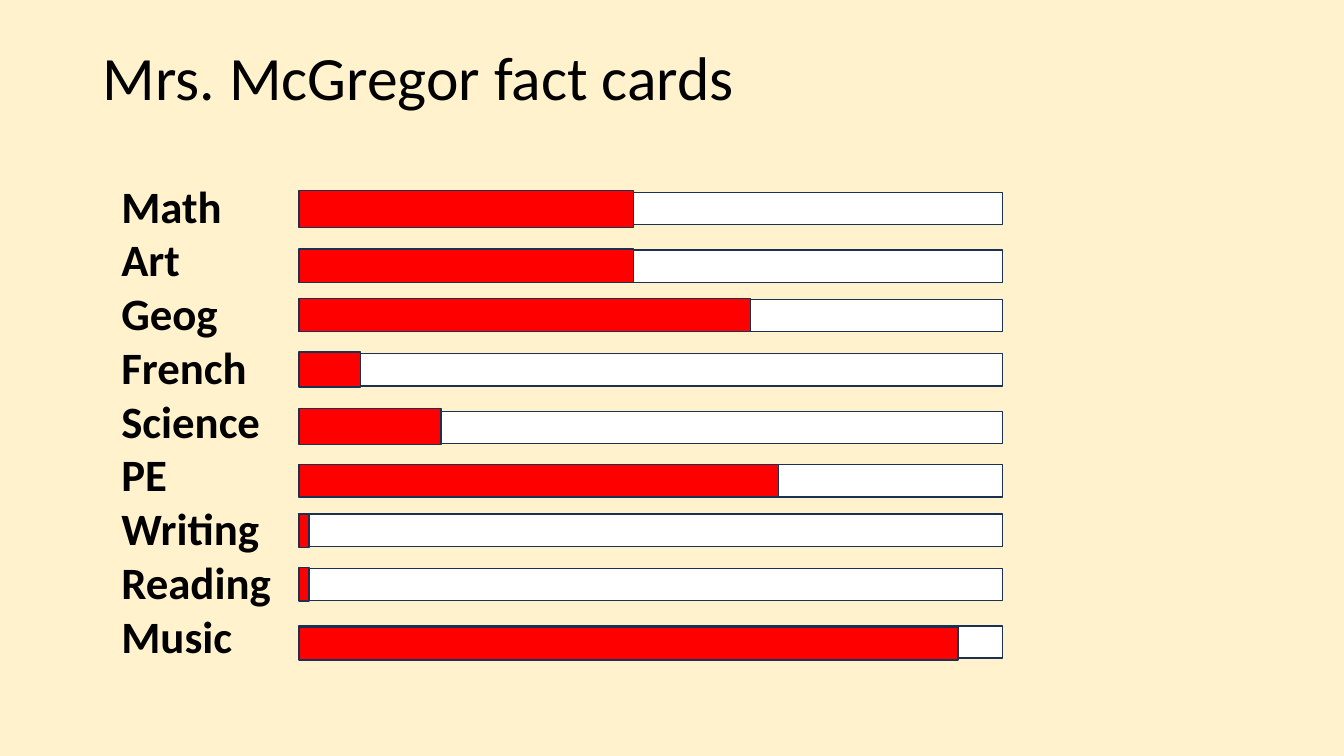
from collections import namedtuple

from pptx import Presentation
from pptx.dml.color import RGBColor
from pptx.enum.shapes import MSO_SHAPE
from pptx.enum.text import MSO_ANCHOR, MSO_AUTO_SIZE, PP_ALIGN
from pptx.util import Pt

CREAM = RGBColor(0xFF, 0xF2, 0xCC)
BLACK = RGBColor(0, 0, 0)
WHITE = RGBColor(0xFF, 0xFF, 0xFF)
RED = RGBColor(0xFF, 0, 0)
NAVY = RGBColor(0x1C, 0x30, 0x52)

Box = namedtuple("Box", "left top width height")
Subject = namedtuple("Subject", "name track_top score_shift score_width score_height")

TITLE_BOX = Box(66, 5, 828, 104.4)
RATINGS_BOX = Box(79.6, 123.8, 636.5, 356.4)
LABEL_WIDTH = 133.9
TRACK_HEIGHT = 23

SUBJECTS = [
    Subject("Math", 13.7, -1.4, 239, 26.6),
    Subject("Art", 54.8, -0.7, 239, 23.8),
    Subject("Geog", 90, -0.7, 322.6, 23.8),
    Subject("French", 128.9, -1.4, 43.9, 25.2),
    Subject("Science", 170, -2.2, 101.5, 25.9),
    Subject("PE", 208.1, 0, 342.7, 23),
    Subject("Writing", 243.4, 0, 7.2, 23.8),
    Subject("Reading", 282.3, -0.7, 7.2, 23.8),
    Subject("Music", 323.3, 0.7, 470.9, 23.8),
]

TITLE_FONT = {"name": "Calibri", "size": Pt(44), "bold": False}
LABEL_FONT = {"name": "Calibri", "size": Pt(32), "bold": True}
FRAME_FORMAT = {
    "margin_left": Pt(7.2),
    "margin_right": Pt(7.2),
    "margin_top": Pt(3.6),
    "margin_bottom": Pt(3.6),
    "word_wrap": True,
}


def apply_format(target, values):
    for attribute, value in values.items():
        setattr(target, attribute, value)


def format_text(paragraph, font, line_spacing):
    apply_format(paragraph, {"alignment": PP_ALIGN.LEFT, "line_spacing": line_spacing})
    apply_format(paragraph.font, font)
    paragraph.font.color.rgb = BLACK


def place_title(slide, box):
    title = slide.shapes.title
    apply_format(title, {side: Pt(length) for side, length in box._asdict().items()})
    title.text = "Mrs. McGregor fact cards"
    apply_format(title.text_frame, FRAME_FORMAT | {
        "vertical_anchor": MSO_ANCHOR.MIDDLE,
        "auto_size": MSO_AUTO_SIZE.NONE,
    })
    format_text(title.text_frame.paragraphs[0], TITLE_FONT, 0.9)


def add_bar(slide, box, color):
    bar = slide.shapes.add_shape(MSO_SHAPE.RECTANGLE, *map(Pt, box))
    bar.shadow.inherit = False
    bar.fill.solid()
    bar.fill.fore_color.rgb = color
    bar.line.color.rgb = NAVY
    bar.line.width = Pt(1)


def place_ratings(slide, box):
    labels = slide.shapes.add_textbox(*map(Pt, box._replace(width=LABEL_WIDTH))).text_frame
    apply_format(labels, FRAME_FORMAT | {"auto_size": MSO_AUTO_SIZE.SHAPE_TO_FIT_TEXT})
    labels.text = "\n".join(subject.name for subject in SUBJECTS)
    for label in labels.paragraphs:
        format_text(label, LABEL_FONT, 1.0)

    track_left = box.left + LABEL_WIDTH
    track_width = box.width - LABEL_WIDTH
    for subject in SUBJECTS:
        track = Box(track_left, box.top + subject.track_top, track_width, TRACK_HEIGHT)
        score = Box(track_left, track.top + subject.score_shift,
                    subject.score_width, subject.score_height)
        add_bar(slide, track, WHITE)
        add_bar(slide, score, RED)


def main():
    deck = Presentation()
    apply_format(deck, {"slide_width": Pt(960), "slide_height": Pt(540)})
    slide = deck.slides.add_slide(deck.slide_layouts[5])
    slide.background.fill.solid()
    slide.background.fill.fore_color.rgb = CREAM
    place_title(slide, TITLE_BOX)
    place_ratings(slide, RATINGS_BOX)
    deck.save("out.pptx")


if __name__ == "__main__":
    main()
